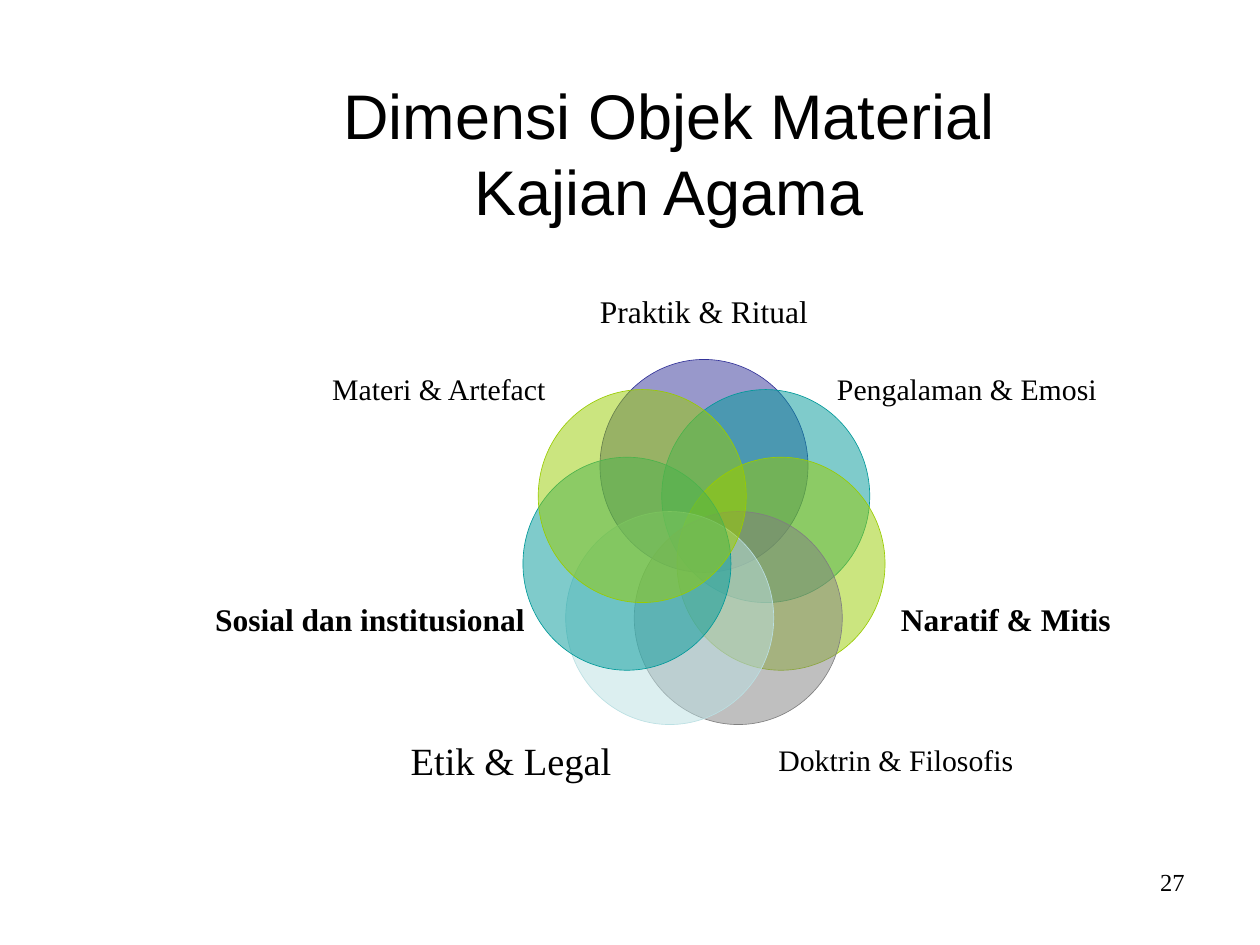
import math

import lxml.etree
import pptx
import pptx.dml.color
import pptx.enum.shapes
import pptx.enum.text
import pptx.oxml.ns
import pptx.util

RGB = pptx.dml.color.RGBColor
BLACK = RGB(0x00, 0x00, 0x00)
INDIGO = RGB(0x33, 0x33, 0x99)
TEAL = RGB(0x00, 0x99, 0x99)
LIME = RGB(0x99, 0xCC, 0x00)
GRAY = RGB(0x80, 0x80, 0x80)
PALE = RGB(0xBB, 0xE0, 0xE3)

SHAPE = pptx.enum.shapes.MSO_SHAPE
ALIGN = pptx.enum.text.PP_ALIGN
ANCHOR = pptx.enum.text.MSO_ANCHOR
SERIF = "Times New Roman"

PX = 914400 // 126
SLIDE = (1260, 945)
TITLE = ("Dimensi Objek Material", "Kajian Agama")
TITLE_AREA = (149, 73, 1040, 158)
BREAK_SIZE = 44
PAGE_NUMBER = "27"
NUMBER_AREA = (903, 861, 294, 66)

RING_CENTER = (704, 546)
RING_RADII = (79, 80)
CIRCLE = (208, 213)
LABEL = (208, 53)

# Clockwise from the top: label, colour, label centre, size, bold
DIMENSIONS = [
    ("Praktik & Ritual", INDIGO, (704, 311), 18, False),
    ("Pengalaman & Emosi", TEAL, (967, 389), 17, False),
    ("Naratif & Mitis", LIME, (1006, 619), 18, True),
    ("Doktrin & Filosofis", GRAY, (896, 760), 17, False),
    ("Etik & Legal", PALE, (511, 760), 22, False),
    ("Sosial dan institusional", TEAL, (370, 619), 18, True),
    ("Materi & Artefact", LIME, (439, 389), 17, False),
]


def emu(lengths):
    return [round(length * PX) for length in lengths]


def centered(center, size):
    """Left, top, width and height of an area around its centre."""
    return (center[0] - size[0] / 2, center[1] - size[1] / 2, *size)


def fill_text(box, lines, align, font, frame_format):
    """Write one paragraph whose lines are parted by line breaks."""
    for name, value in frame_format.items():
        setattr(box.text_frame, name, value)
    para = box.text_frame.paragraphs[0]
    para.alignment = align
    for index, line in enumerate(lines):
        if index:
            para.add_line_break()
        span = para.add_run()
        span.text = line
        span.font.color.rgb = BLACK
        for name, value in font.items():
            setattr(span.font, name, value)
    return para


def add_circle(page, center, color):
    circle = page.shapes.add_shape(SHAPE.OVAL, *emu(centered(center, CIRCLE)))
    circle.shadow.inherit = False
    circle.fill.solid()
    circle.fill.fore_color.rgb = color
    circle.line.color.rgb = color
    circle.line.width = pptx.util.Pt(0.37)
    qn = pptx.oxml.ns.qn
    fill_color = circle._element.spPr.find(qn("a:solidFill")).find(qn("a:srgbClr"))
    lxml.etree.SubElement(fill_color, qn("a:alpha"), val="50000")


def add_label_box(page, center):
    """Add a bare rectangle, whose text may run past its sides unwrapped."""
    box = page.shapes.add_shape(SHAPE.RECTANGLE, *emu(centered(center, LABEL)))
    box.shadow.inherit = False
    box.fill.background()
    box.line.fill.background()
    return box


def add_title(page):
    box = page.shapes.add_textbox(*emu(TITLE_AREA))
    para = fill_text(box, TITLE, ALIGN.CENTER,
                     {"name": "Arial", "size": pptx.util.Pt(36)},
                     {"word_wrap": True, "vertical_anchor": ANCHOR.MIDDLE})
    qn = pptx.oxml.ns.qn
    line_break = para._p.find(qn("a:br"))
    lxml.etree.SubElement(line_break, qn("a:rPr"), sz=str(BREAK_SIZE * 100))


def add_page_number(page):
    box = page.shapes.add_textbox(*emu(NUMBER_AREA))
    fill_text(box, [PAGE_NUMBER], ALIGN.RIGHT,
              {"name": SERIF, "size": pptx.util.Pt(14)}, {"word_wrap": True})


def add_dimensions(page):
    label_frame = {"word_wrap": False, "vertical_anchor": ANCHOR.MIDDLE,
                   "margin_left": 0, "margin_right": 0,
                   "margin_top": 0, "margin_bottom": 0}
    for index, (label, color, label_center, size, bold) in enumerate(DIMENSIONS):
        angle = 2 * math.pi * index / len(DIMENSIONS)
        center = (RING_CENTER[0] + RING_RADII[0] * math.sin(angle),
                  RING_CENTER[1] - RING_RADII[1] * math.cos(angle))
        add_circle(page, center, color)
        font = {"name": SERIF, "size": pptx.util.Pt(size), "bold": bold}
        fill_text(add_label_box(page, label_center), [label], ALIGN.CENTER,
                  font, label_frame)


def main():
    deck = pptx.Presentation()
    deck.slide_width, deck.slide_height = emu(SLIDE)
    page = deck.slides.add_slide(deck.slide_layouts[6])
    add_page_number(page)
    add_title(page)
    add_dimensions(page)
    deck.save("out.pptx")


if __name__ == "__main__":
    main()
